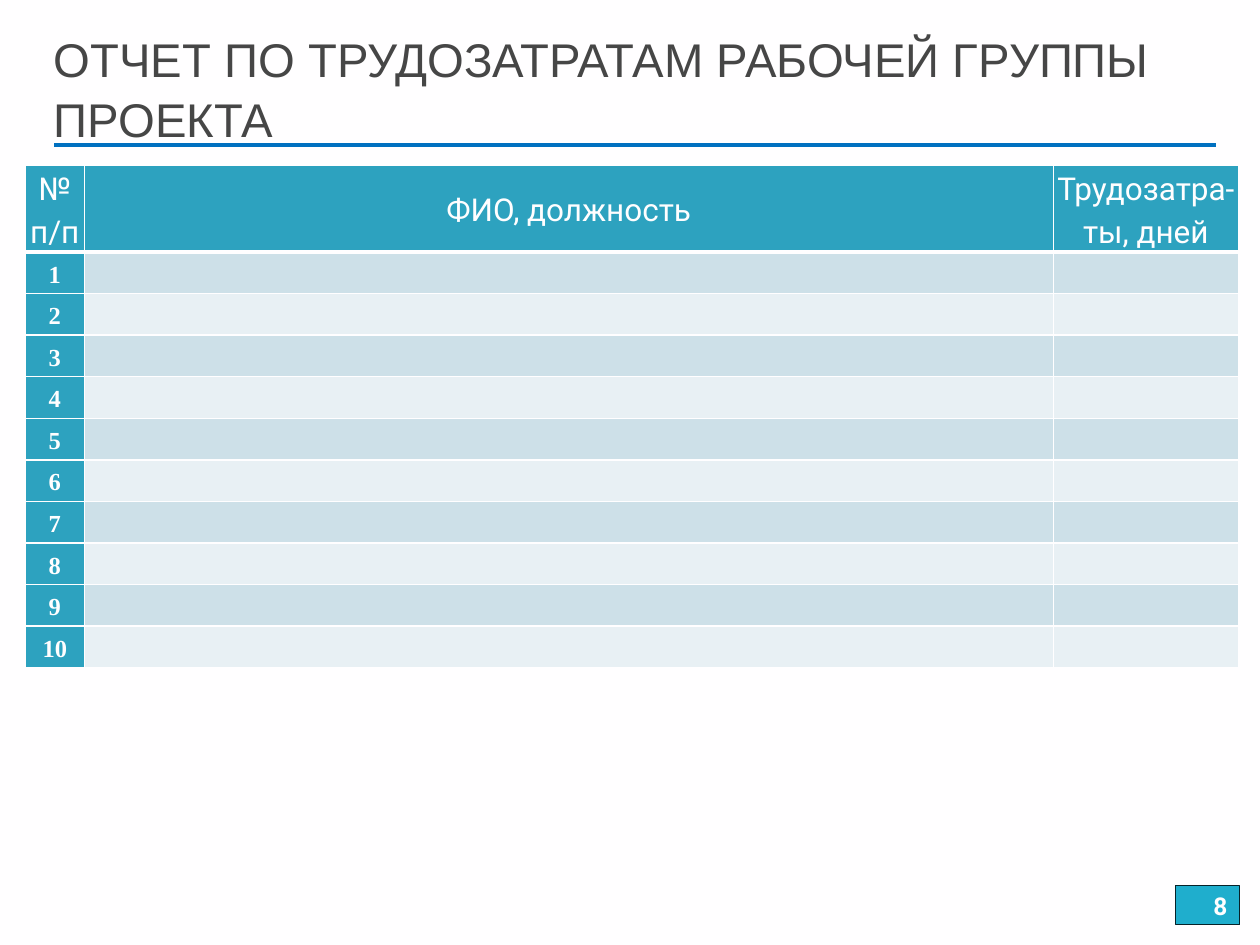
import pptx
import pptx.util
import pptx.dml.color
import pptx.enum.shapes
import pptx.enum.text
import pptx.oxml
import pptx.oxml.ns
from lxml import etree

In, Pt = pptx.util.Inches, pptx.util.Pt
ALIGN, ANCHOR = pptx.enum.text.PP_ALIGN, pptx.enum.text.MSO_ANCHOR

COLORS = {
    "paper": "FFFEFF", "title": "464646", "rule": "0070C0", "head": "2DA2BF",
    "odd": "CDE0E8", "even": "E8F0F4", "badge": "1FAECD", "badge_line": "062329",
}
TITLE = "ОТЧЕТ ПО ТРУДОЗАТРАТАМ РАБОЧЕЙ ГРУППЫ ПРОЕКТА"
HEADERS = ["№ п/п", "ФИО, должность", "Трудозатра-ты, дней"]
ROWS = [[str(n), "", ""] for n in range(1, 11)]
PAGE = "8"

COL_WIDTHS = [0.47, 7.69, 1.47]
HEAD_HEIGHT, ROW_HEIGHT = 0.66, 0.33
TABLE_LEFT, TABLE_TOP = 0.2, 1.31
RULE_LEFT, RULE_RIGHT, RULE_Y = 0.43, 9.65, 1.15

FORMATS = {
    "title": {"name": "Arial", "size": Pt(27), "bold": False},
    "header": {"name": "Roboto", "size": Pt(18), "bold": False},
    "number": {"name": "Times New Roman", "size": Pt(14), "bold": True},
    "page": {"name": "Roboto", "size": Pt(14), "bold": True},
}
CELL_FRAME = {
    "margin_left": In(0.02), "margin_right": In(0.02),
    "margin_top": 0, "margin_bottom": 0, "vertical_anchor": ANCHOR.MIDDLE,
}


def rgb(key):
    return pptx.dml.color.RGBColor.from_string(COLORS[key])


def paint(fill, key):
    fill.solid()
    fill.fore_color.rgb = rgb(key)


def write(tf, text, style, color, align, spacing):
    p = tf.paragraphs[0]
    p.alignment, p.line_spacing = align, spacing
    r = p.add_run()
    r.text = text
    for name, value in FORMATS[style].items():
        setattr(r.font, name, value)
    r.font.color.rgb = rgb(color)


def add_borders(cell, bottom):
    """Draw the four cell borders, ahead of the fill as the schema asks."""
    tcPr = cell._tc.get_or_add_tcPr()
    for i, (side, width) in enumerate(zip("LRTB", (1, 1, 1, bottom))):
        ln = etree.Element(pptx.oxml.ns.qn(f"a:ln{side}"), w=str(Pt(width)))
        fill = etree.SubElement(ln, pptx.oxml.ns.qn("a:solidFill"))
        etree.SubElement(fill, pptx.oxml.ns.qn("a:srgbClr"), val=COLORS["paper"])
        tcPr.insert(i, ln)


def add_title(s):
    tf = s.shapes.add_textbox(In(0.33), In(0.23), In(9.5), In(0.92)).text_frame
    tf.word_wrap, tf.vertical_anchor = True, ANCHOR.MIDDLE
    write(tf, TITLE, "title", "title", ALIGN.LEFT, 1.05)
    rule = s.shapes.add_connector(
        pptx.enum.shapes.MSO_CONNECTOR.STRAIGHT,
        In(RULE_LEFT), In(RULE_Y), In(RULE_RIGHT), In(RULE_Y))
    rule.line.color.rgb, rule.line.width = rgb("rule"), Pt(2)
    etree.SubElement(rule._element.spPr, pptx.oxml.ns.qn("a:effectLst"))


def add_report_table(s):
    data = [HEADERS] + ROWS
    heights = [HEAD_HEIGHT] + [ROW_HEIGHT] * len(ROWS)
    table = s.shapes.add_table(
        len(data), len(HEADERS), In(TABLE_LEFT), In(TABLE_TOP),
        In(sum(COL_WIDTHS)), In(sum(heights))).table
    table.first_col = True
    for column, width in zip(table.columns, COL_WIDTHS):
        column.width = In(width)
    for row, height in zip(table.rows, heights):
        row.height = In(height)
    for i, values in enumerate(data):
        band = "odd" if i % 2 else "even"
        for j, text in enumerate(values):
            cell = table.cell(i, j)
            for name, value in CELL_FRAME.items():
                setattr(cell, name, value)
            paint(cell.fill, "head" if i == 0 or j == 0 else band)
            add_borders(cell, 1 if i else 3)
            if text:
                write(cell.text_frame, text, "number" if i else "header",
                      "paper", ALIGN.CENTER, 1.15)


def add_page_number(s):
    sp = s.shapes.add_shape(
        pptx.enum.shapes.MSO_SHAPE.RECTANGLE, In(9.33), In(7.03), In(0.51), In(0.31))
    sp.shadow.inherit = False
    paint(sp.fill, "badge")
    sp.line.color.rgb, sp.line.width = rgb("badge_line"), Pt(0.75)
    sp.text_frame.vertical_anchor = ANCHOR.MIDDLE
    write(sp.text_frame, PAGE, "page", "paper", ALIGN.RIGHT, 1.0)


def main():
    prs = pptx.Presentation()
    prs.slide_width, prs.slide_height = In(10), In(7.5)
    s = prs.slides.add_slide(prs.slide_layouts[6])
    paint(s.background.fill, "paper")
    add_title(s)
    add_report_table(s)
    add_page_number(s)
    prs.save("out.pptx")


if __name__ == "__main__":
    main()
